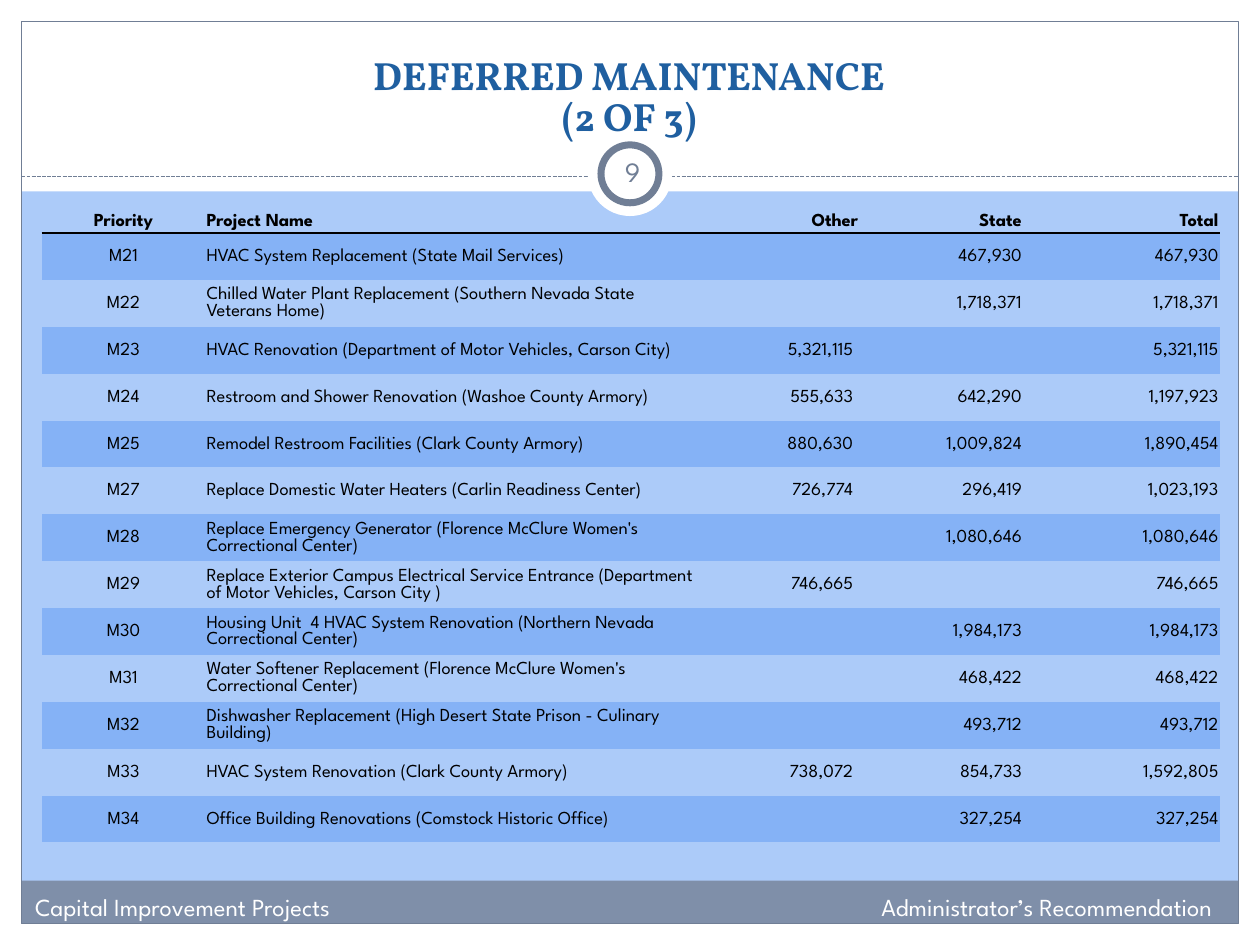
from lxml import etree
from pptx import Presentation
from pptx.dml.color import RGBColor
from pptx.enum.dml import MSO_LINE
from pptx.enum.shapes import MSO_CONNECTOR, MSO_SHAPE
from pptx.enum.text import MSO_ANCHOR, PP_ALIGN
from pptx.oxml.ns import qn
from pptx.util import Inches, Pt

RECTANGLE, OVAL = MSO_SHAPE.RECTANGLE, MSO_SHAPE.OVAL
STRAIGHT, DASH = MSO_CONNECTOR.STRAIGHT, MSO_LINE.SQUARE_DOT
LEFT, CENTER, RIGHT = PP_ALIGN.LEFT, PP_ALIGN.CENTER, PP_ALIGN.RIGHT
TOP, MIDDLE, BOTTOM = MSO_ANCHOR.TOP, MSO_ANCHOR.MIDDLE, MSO_ANCHOR.BOTTOM

WHITE = RGBColor(0xFF, 0xFF, 0xFF)
BLACK = RGBColor(0, 0, 0)
PALE_BLUE = RGBColor(0xAC, 0xCB, 0xF9)
BAND_BLUE = RGBColor(0x85, 0xB2, 0xF6)
TITLE_BLUE = RGBColor(0x1F, 0x5F, 0xA0)
FOOTER_GREY = RGBColor(0x7F, 0x8F, 0xA9)
FRAME_GREY = RGBColor(0x70, 0x7E, 0x95)
BODY_FONT, TITLE_FONT = "League Spartan", "Vollkorn"
NO_STYLE = "{2D5ABB26-0587-4C30-8999-92F81FD0307C}"

WIDTH, HEIGHT = 10, 7.5
MARGIN = 0.17
HEADER_HEIGHT = 1.52
RULE_Y = 1.4
FOOTER_TOP, FOOTER_HEIGHT = 6.99, 0.34

COLUMNS = (
    ("Priority", 1.3, CENTER),
    ("Project Name", 3.89, LEFT),
    ("Other", 1.3, RIGHT),
    ("State", 1.3, RIGHT),
    ("Total", 1.56, RIGHT),
)
OTHER_COLUMN = 2
PROJECTS = (
    ("M21", "HVAC System Replacement (State Mail Services)", "", "467,930", "467,930"),
    ("M22", "Chilled Water Plant Replacement (Southern Nevada State Veterans Home)",
     "", "1,718,371", "1,718,371"),
    ("M23", "HVAC Renovation (Department of Motor Vehicles, Carson City)",
     "5,321,115", "", "5,321,115"),
    ("M24", "Restroom and Shower Renovation (Washoe County Armory)",
     "555,633", "642,290", "1,197,923"),
    ("M25", "Remodel Restroom Facilities (Clark County Armory)",
     "880,630", "1,009,824", "1,890,454"),
    ("M27", "Replace Domestic Water Heaters (Carlin Readiness Center)",
     "726,774", "296,419", "1,023,193"),
    ("M28", "Replace Emergency Generator (Florence McClure Women's Correctional Center)",
     "", "1,080,646", "1,080,646"),
    ("M29", "Replace Exterior Campus Electrical Service Entrance "
     "(Department of Motor Vehicles, Carson City )", "746,665", "", "746,665"),
    ("M30", "Housing Unit  4 HVAC System Renovation (Northern Nevada Correctional Center)",
     "", "1,984,173", "1,984,173"),
    ("M31", "Water Softener Replacement (Florence McClure Women's Correctional Center)",
     "", "468,422", "468,422"),
    ("M32", "Dishwasher Replacement (High Desert State Prison - Culinary Building)",
     "", "493,712", "493,712"),
    ("M33", "HVAC System Renovation (Clark County Armory)",
     "738,072", "854,733", "1,592,805"),
    ("M34", "Office Building Renovations (Comstock Historic Office)",
     "", "327,254", "327,254"),
)


def inches(box):
    return [Inches(length) for length in box]


def add_run(paragraph, text, size, color, font=BODY_FONT, bold=False):
    run = paragraph.add_run()
    run.text = text
    run.font.name, run.font.size, run.font.bold = font, Pt(size), bold
    run.font.color.rgb = color


def add_panel(slide, kind, box, fill=None, line=None, line_width=0.75):
    shape = slide.shapes.add_shape(kind, *inches(box))
    shape.shadow.inherit = False
    if fill is None:
        shape.fill.background()
    else:
        shape.fill.solid()
        shape.fill.fore_color.rgb = fill
    if line is None:
        shape.line.fill.background()
    else:
        shape.line.color.rgb = line
        shape.line.width = Pt(line_width)


def add_label(slide, box, text, size, color, align, anchor):
    frame = slide.shapes.add_textbox(*inches(box)).text_frame
    frame.word_wrap = True
    frame.vertical_anchor = anchor
    frame.paragraphs[0].alignment = align
    add_run(frame.paragraphs[0], text, size, color)


def add_frame(slide):
    inner_width, inner_height = WIDTH - 2 * MARGIN, HEIGHT - 2 * MARGIN
    for box in (
        (0, HEIGHT - MARGIN, WIDTH, MARGIN),
        (0, 0, WIDTH, HEADER_HEIGHT),
        (0, 0, MARGIN, HEIGHT),
        (WIDTH - MARGIN, 0, MARGIN, HEIGHT),
    ):
        add_panel(slide, RECTANGLE, box, WHITE)
    add_panel(slide, RECTANGLE, (MARGIN, FOOTER_TOP, inner_width, FOOTER_HEIGHT), FOOTER_GREY)
    add_panel(slide, RECTANGLE, (MARGIN, MARGIN, inner_width, inner_height), line=FRAME_GREY)
    rule = slide.shapes.add_connector(
        STRAIGHT, *inches((MARGIN, RULE_Y, WIDTH - MARGIN, RULE_Y)))
    rule.line.color.rgb = FRAME_GREY
    rule.line.width = Pt(0.75)
    rule.line.dash_style = DASH
    etree.SubElement(rule.element.spPr, qn("a:effectLst"))


def add_page_badge(slide, center_x, center_y, number):
    for diameter, line in ((0.67, None), (0.46, FRAME_GREY)):
        box = (center_x - diameter / 2, center_y - diameter / 2, diameter, diameter)
        add_panel(slide, OVAL, box, WHITE, line, 4)
    add_label(slide, (center_x - 0.23, center_y - 0.26, 0.5, 0.48),
              number, 16, FRAME_GREY, CENTER, MIDDLE)


def place_title(slide, box, lines):
    title = slide.shapes.title
    title.element.getparent().append(title.element)
    title.left, title.top, title.width, title.height = inches(box)
    frame = title.text_frame
    frame.word_wrap = True
    frame.vertical_anchor = BOTTOM
    frame.margin_top = frame.margin_bottom = 0
    paragraph = frame.paragraphs[0]
    paragraph.alignment = CENTER
    paragraph.line_spacing = 0.86
    for index, line in enumerate(lines):
        if index:
            paragraph.add_line_break()
        add_run(paragraph, line, 22.5, TITLE_BLUE, TITLE_FONT, True)


def add_footer(slide, box, left_text, right_text):
    left, top, width, height = box
    half = width / 2
    add_label(slide, (left, top, half, height), left_text, 14, WHITE, LEFT, TOP)
    add_label(slide, (left + half, top, half, height), right_text, 14, WHITE, RIGHT, TOP)


def underline_cell(cell):
    border = etree.Element(qn("a:lnB"), w=str(Pt(1)))
    fill = etree.SubElement(border, qn("a:solidFill"))
    etree.SubElement(fill, qn("a:srgbClr"), val=str(BLACK))
    cell._tc.get_or_add_tcPr().insert(0, border)


def fill_cell(cell, text, align, header, banded, right_margin):
    cell.vertical_anchor = MIDDLE
    cell.margin_left = cell.margin_top = Inches(0.01)
    cell.margin_right, cell.margin_bottom = Inches(right_margin), 0
    if banded:
        cell.fill.solid()
        cell.fill.fore_color.rgb = BAND_BLUE
    else:
        cell.fill.background()
    paragraph = cell.text_frame.paragraphs[0]
    paragraph.alignment = align
    if text:
        add_run(paragraph, text, 10.5, BLACK, bold=header)
    if header:
        underline_cell(cell)


def add_project_table(slide, box, header_height):
    rows = [[name for name, _, _ in COLUMNS], *PROJECTS]
    table = slide.shapes.add_table(len(rows), len(COLUMNS), *inches(box)).table
    table.horz_banding = False
    table._tbl.tblPr.find(qn("a:tableStyleId")).text = NO_STYLE
    row_height = (box[3] - header_height) / len(PROJECTS)
    for column, (_, width, _) in zip(table.columns, COLUMNS):
        column.width = Inches(width)
    for row_index, values in enumerate(rows):
        header = row_index == 0
        table.rows[row_index].height = Inches(header_height if header else row_height)
        for column_index, text in enumerate(values):
            indented = column_index == OTHER_COLUMN and not header
            fill_cell(table.cell(row_index, column_index), text, COLUMNS[column_index][2],
                      header, row_index % 2 == 1, 0.05 if indented else 0.01)


def main():
    presentation = Presentation()
    presentation.slide_width, presentation.slide_height = Inches(WIDTH), Inches(HEIGHT)
    slide = presentation.slides.add_slide(presentation.slide_layouts[5])
    slide.background.fill.solid()
    slide.background.fill.fore_color.rgb = PALE_BLUE
    add_frame(slide)
    add_page_badge(slide, WIDTH / 2, 1.38, "9")
    place_title(slide, (0.33, 0.25, 9.33, 0.86), ("DEFERRED MAINTENANCE", "(2 OF 3)"))
    add_footer(slide, (0.18, 7.03, 9.54, 0.34),
               "Capital Improvement Projects", "Administrator’s Recommendation")
    add_project_table(slide, (0.33, 1.66, 9.35, 5.03), 0.19)
    presentation.save("out.pptx")


if __name__ == "__main__":
    main()
